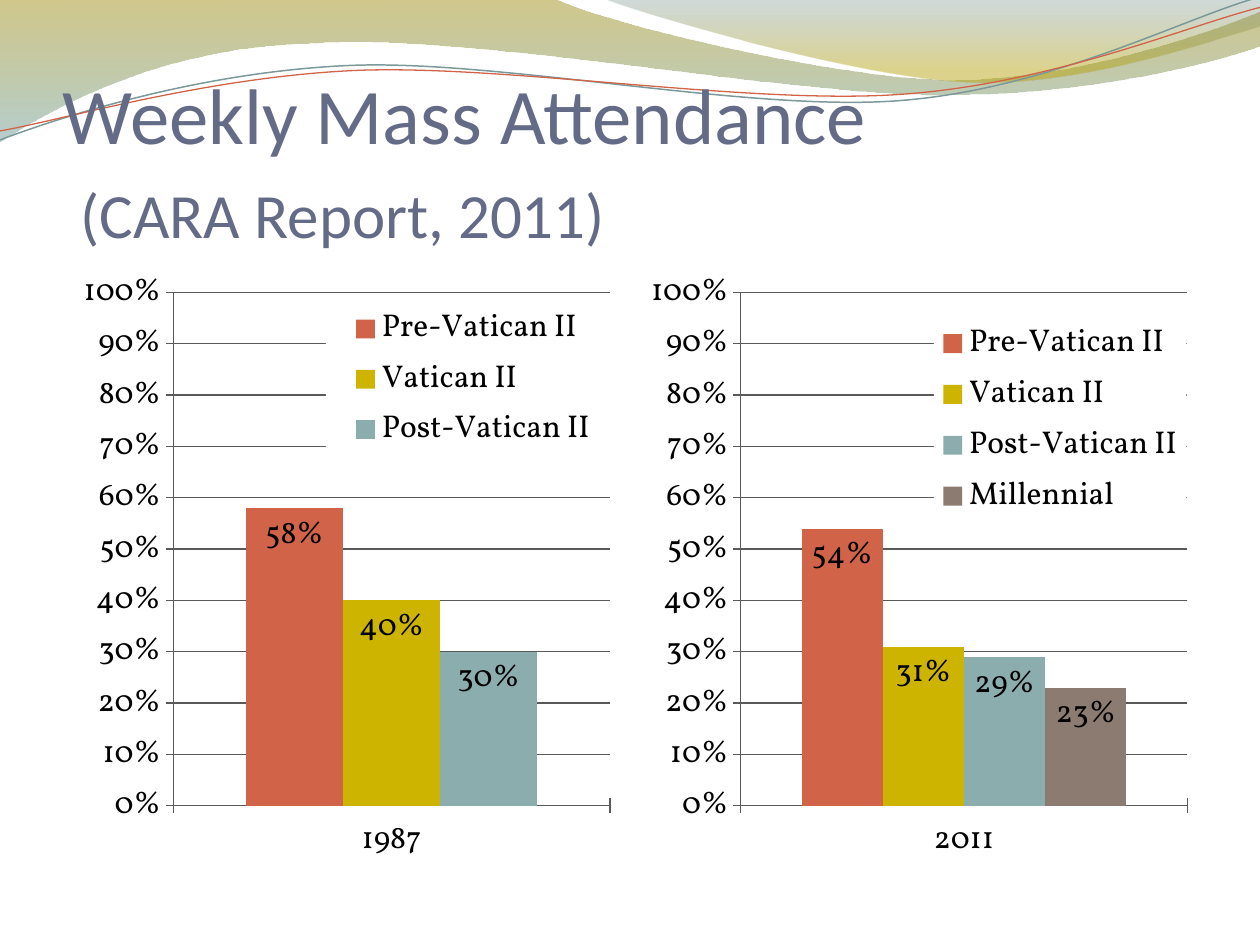
import math
from pptx import Presentation, util as u
from pptx.chart.data import CategoryChartData
from pptx.dml.color import RGBColor
from pptx.enum import chart as ch, text
from pptx.oxml import parse_xml
from pptx.oxml.ns import nsdecls, qn

BARS = ("D16349", "CCB400", "8CADAE", "8C7B70")
NAMES = ("Pre-Vatican II", "Vatican II", "Post-Vatican II", "Millennial")


def rgb(code):
    return RGBColor.from_string(code)


def layout(box, inner=False):
    """Make a chart layout from a box in percent."""
    target = '<c:layoutTarget val="inner"/>' if inner else ""
    modes = "".join(f'<c:{k}Mode val="edge"/>' for k in "xy")
    sizes = "".join(f'<c:{k} val="{v / 100:.3f}"/>' for k, v in zip("xywh", box))
    return parse_xml(f'<c:layout {nsdecls("c")}><c:manualLayout>{target}'
                     f'{modes}{sizes}</c:manualLayout></c:layout>')


def turn(spot, pivot, angle):
    """Turn a spot clockwise about a pivot."""
    dx, dy = spot[0] - pivot[0], spot[1] - pivot[1]
    cos, sin = math.cos(math.radians(angle)), math.sin(math.radians(angle))
    return pivot[0] + dx * cos - dy * sin, pivot[1] + dx * sin + dy * cos


class Deck:
    """Holds the style and the current slide."""

    head, body = "Calibri", "Vollkorn"
    ink, tint, rule = "000000", "646B86", "595959"
    tilt = 2.7

    def __init__(self):
        self.prs = Presentation()
        self.prs.slide_width, self.prs.slide_height = u.Cm(25.4), u.Cm(19.05)
        self.slide = self.prs.slides.add_slide(self.prs.slide_layouts[6])

    def shape(self, steps, close):
        """Draw steps of one spot as lines and of three spots as curves."""
        spots = [(u.Cm(x), u.Cm(y)) for step in steps for x, y in step]
        pen = self.slide.shapes.build_freeform(*spots[0])
        pen.add_line_segments(spots[1:], close=close)
        shape = pen.convert_to_shape()
        shape.shadow.inherit = False
        lines = iter(list(shape._element.iter(qn("a:lnTo"))))
        for step in steps[1:]:
            nodes = [next(lines) for _ in step]
            if len(step) == 3:
                bend = parse_xml(f'<a:cubicBezTo {nsdecls("a")}/>')
                nodes[0].addprevious(bend)
                for node in nodes:
                    bend.append(node[0])
                    node.getparent().remove(node)
        return shape

    def wave(self, steps, stops):
        shape = self.shape(steps, True)
        shape.line.fill.background()
        shape.fill.gradient()
        shape.fill.gradient_angle = 270
        for stop, (place, code, _) in zip(shape.fill.gradient_stops, stops):
            stop.position = place
            stop.color.rgb = rgb(code)
        for node, (_, _, alpha) in zip(shape._element.iter(qn("a:srgbClr")), stops):
            node.append(parse_xml(f'<a:alpha {nsdecls("a")} val="{alpha * 1000}"/>'))

    def curve(self, steps, pivot, code, width):
        flat = [[turn(spot, pivot, self.tilt) for spot in step] for step in steps]
        shape = self.shape(flat, False)
        shape.rotation = -self.tilt
        shape.fill.background()
        shape.line.color.rgb = rgb(code)
        shape.line.width = u.Pt(width)

    def title(self, box, top, size, sub, small):
        frame = self.slide.shapes.add_textbox(*map(u.Cm, box)).text_frame
        frame.word_wrap = True
        frame.vertical_anchor = text.MSO_ANCHOR.BOTTOM
        frame.margin_left = frame.margin_right = frame.margin_bottom = 0
        para = frame.paragraphs[0]
        para.text = top + "\v "
        para.add_run().text = sub
        for run in para.runs:
            run.font.size = u.Pt(size)
            run.font.name = self.head
            run.font.color.rgb = rgb(self.tint)
        para.runs[-1].font.size = u.Pt(small)

    def chart(self, left, year, vals, plot, key):
        data = CategoryChartData(number_format="0%")
        data.categories = [year]
        for name, val in zip(NAMES, vals):
            data.add_series(name, [val])
        box = map(u.Cm, (left, 5.33, 11.23, 12.32))
        chart = self.slide.shapes.add_chart(
            ch.XL_CHART_TYPE.COLUMN_CLUSTERED, *box, data).chart
        chart.has_title = False
        chart.font.size, chart.font.name = u.Pt(18), self.body
        chart.font.color.rgb = rgb(self.ink)
        self.bars(chart.plots[0])
        self.axes(chart)
        area = chart._chartSpace.chart.plotArea
        for old in area.findall(qn("c:layout")):
            area.remove(old)
        area.insert(0, layout(plot, True))
        self.legend(chart, key)

    def bars(self, plot):
        plot.gap_width, plot.overlap = 150, 0
        plot.vary_by_categories = False
        for row, code in zip(plot.series, BARS):
            row.format.fill.solid()
            row.format.fill.fore_color.rgb = rgb(code)
            tags = row.data_labels
            tags.show_value = True
            tags.position = ch.XL_LABEL_POSITION.INSIDE_END
            tags.number_format, tags.number_format_is_linked = "0%", False

    def axes(self, chart):
        side = chart.value_axis
        side.maximum_scale = 1
        side.has_major_gridlines = True
        side.tick_labels.number_format = "0%"
        side.tick_labels.number_format_is_linked = False
        for axis in (side, chart.category_axis):
            axis.major_tick_mark = ch.XL_TICK_MARK.CROSS
            axis.format.line.color.rgb = rgb(self.rule)
        side.major_gridlines.format.line.color.rgb = rgb(self.rule)

    def legend(self, chart, key):
        chart.has_legend = True
        chart.legend.position = ch.XL_LEGEND_POSITION.RIGHT
        chart.legend.include_in_layout = True
        node = chart.legend._element
        for old in node.findall(qn("c:layout")):
            node.remove(old)
        node.find(qn("c:legendPos")).addnext(layout(key))
        node.find(qn("c:overlay")).addnext(parse_xml(
            f'<c:spPr {nsdecls("c", "a")}><a:solidFill><a:srgbClr val="FFFFFF"/>'
            '</a:solidFill></c:spPr>'))


def main():
    deck = Deck()
    deck.wave([
        [(0, 0)], [(11.18, -0.03)],
        [(12.09, 0.43), (16.87, 1.6), (19.25, 1.6)],
        [(21.67, 1.6), (24.33, 0.66), (25.4, 0.23)], [(25.43, 0.91)],
        [(24.97, 1.12), (22.1, 1.93), (18.95, 1.91)],
        [(15.8, 1.91), (9.7, 0.71), (6.53, 0.86)],
        [(3.28, 0.91), (1.17, 2.11), (-0.03, 2.87)],
    ], [(0, "978500", 45), (1, "77A5A6", 55)])
    deck.wave([
        [(12.17, -0.03)], [(12.93, 0.28), (17.32, 1.57), (19.53, 1.65)],
        [(21.74, 1.75), (24.41, 0.81), (25.4, 0.53)], [(25.4, 0)],
    ], [(0, "648484", 30), (0.8, "B49F00", 45)])
    deck.curve([
        [(0, 2.82)], [(1.22, 2.36), (4.01, 1.45), (7.04, 1.32)],
        [(10.03, 1.19), (15.06, 2.26), (18.11, 2.03)],
        [(21.16, 1.8), (23.83, 0.38), (25.35, -0.05)],
    ], (12.67, 1.46), "7C999A", 0.85)
    deck.curve([
        [(0, 2.64)], [(1.19, 2.44), (4.17, 1.55), (7.19, 1.42)],
        [(10.24, 1.3), (15.16, 2.13), (18.21, 1.9)],
        [(21.23, 1.68), (23.9, 0.53), (25.4, 0.15)],
    ], (12.7, 1.5), "D16349", 0.75)
    deck.title((1.27, 1.95, 23.5, 3.18),
               "Weekly Mass Attendance", 45, "(CARA Report, 2011)", 36)
    deck.chart(1.27, "1987", (0.58, 0.4, 0.3),
               (19.8, 4.6, 78.4, 84), (47.2, 6, 53.2, 25.6))
    deck.chart(12.9, "2011", (0.54, 0.31, 0.29, 0.23),
               (18.1, 4.6, 80.2, 84), (52.8, 8.3, 45.3, 34.3))
    deck.prs.save("out.pptx")


if __name__ == "__main__":
    main()
